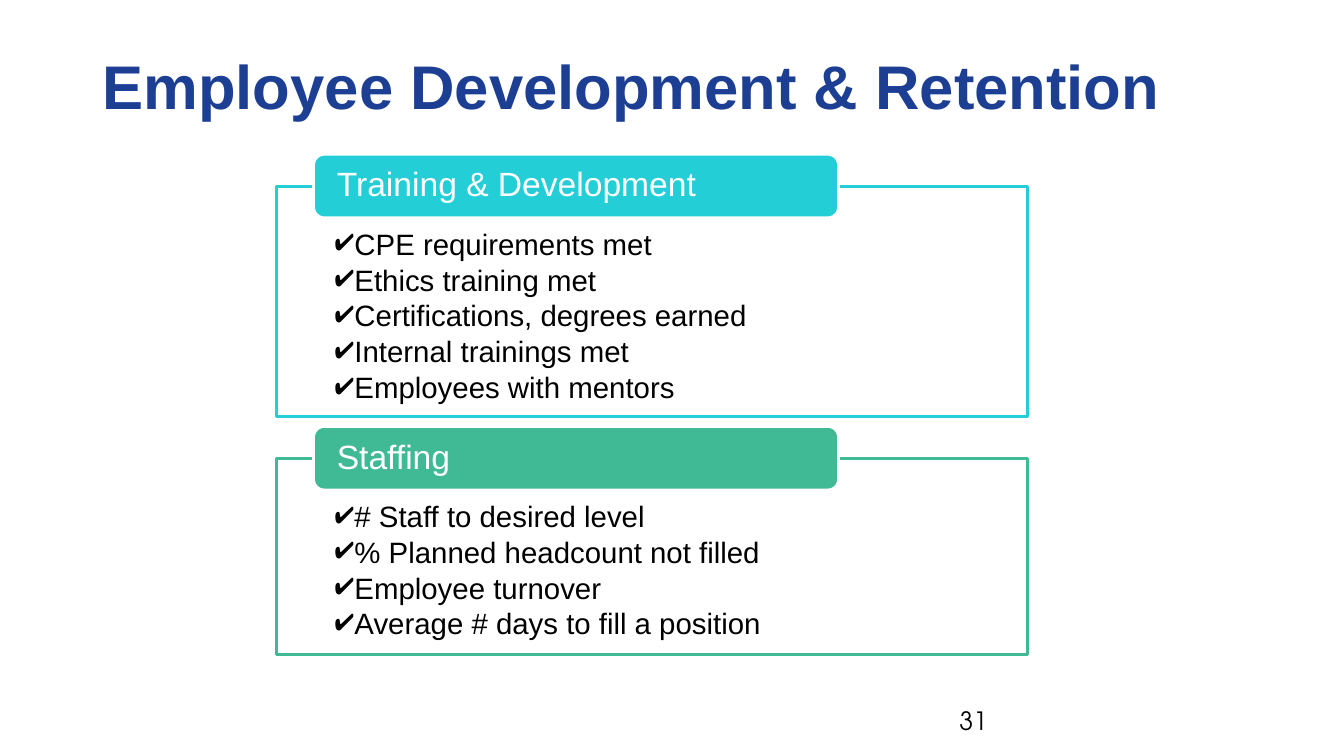
import pptx
import pptx.util
import pptx.dml.color
import pptx.enum.shapes
import pptx.enum.text
import lxml.etree

Pt = pptx.util.Pt
ANCHOR = pptx.enum.text.MSO_ANCHOR
SHAPE = pptx.enum.shapes.MSO_SHAPE

# Content
TITLE = "Employee Development & Retention"
PAGE_NUMBER = "31"
SECTIONS = [
    ("Training & Development", "cyan", [
        "CPE requirements met",
        "Ethics training met",
        "Certifications, degrees earned",
        "Internal trainings met",
        "Employees with mentors",
    ]),
    ("Staffing", "green", [
        "# Staff to desired level",
        "% Planned headcount not filled",
        "Employee turnover",
        "Average # days to fill a position",
    ]),
]
COLORS = {"navy": "1C3F94", "cyan": "24CED7", "green": "40B995",
          "white": "FFFFFF", "black": "000000"}

# Layout, in points
PANEL_LEFT, PANEL_WIDTH, FIRST_PANEL_TOP = 197.5, 536.5, 133.2
PANEL_PADDING, BULLET_HEIGHT, PANEL_GAP = 41.7, 24.5, 30.2
HEADING_LEFT, HEADING_WIDTH, HEADING_HEIGHT = 224, 375, 45.4
HEADING_RISE = 23
BULLET_INDENT = 14


def color(name):
    return pptx.dml.color.RGBColor.from_string(COLORS[name])


def add_block(kind, box, fill, line):
    block = slide.shapes.add_shape(kind, *map(Pt, box))
    block.shadow.inherit = False
    block.fill.solid()
    block.fill.fore_color.rgb = color(fill)
    block.line.color.rgb = color(line)
    block.line.width = Pt(2)
    return block


def add_label(box):
    return slide.shapes.add_textbox(*map(Pt, box))


def write(holder, lines, size, ink, insets, anchor, font="Arial",
          bold=False, spacing=1.0, gap=0, bullet=None):
    frame = holder.text_frame
    frame.word_wrap = True
    frame.vertical_anchor = anchor
    (frame.margin_left, frame.margin_top,
     frame.margin_right, frame.margin_bottom) = map(Pt, insets)
    frame.text = "\n".join(lines)
    for index, paragraph in enumerate(frame.paragraphs):
        paragraph.alignment = pptx.enum.text.PP_ALIGN.LEFT
        paragraph.line_spacing = spacing
        paragraph.space_before = Pt(gap if index else 0)
        if bullet:
            add_bullet(paragraph, bullet, ink)
        for run in paragraph.runs:
            run.font.name = font
            run.font.size = Pt(size)
            run.font.bold = bold
            run.font.color.rgb = color(ink)


def add_bullet(paragraph, character, ink):
    properties = paragraph._p.get_or_add_pPr()
    properties.set("marL", str(Pt(BULLET_INDENT)))
    properties.set("indent", str(-Pt(BULLET_INDENT)))
    namespace = "{" + properties.nsmap["a"] + "}"
    tint = lxml.etree.SubElement(properties, namespace + "buClr")
    lxml.etree.SubElement(tint, namespace + "srgbClr", val=COLORS[ink])
    lxml.etree.SubElement(properties, namespace + "buChar", char=character)


presentation = pptx.Presentation()
presentation.slide_width, presentation.slide_height = Pt(960), Pt(540)
slide = presentation.slides.add_slide(presentation.slide_layouts[6])

# Title
write(add_label((66.2, 28.8, 828, 58.3)), [TITLE], 44, "navy",
      (7.2, 0, 7.2, 0), ANCHOR.BOTTOM, bold=True)

# Sections: outlined panel with a heading over its top edge
panel_top = FIRST_PANEL_TOP
for heading, accent, measures in SECTIONS:
    panel_height = PANEL_PADDING + BULLET_HEIGHT * len(measures)
    panel = add_block(SHAPE.RECTANGLE,
                      (PANEL_LEFT, panel_top, PANEL_WIDTH, panel_height),
                      "white", accent)
    write(panel, measures, 21, "black", (41.7, 31, 41.7, 10.8), ANCHOR.TOP,
          spacing=0.9, gap=2.9, bullet="✔")

    tab = add_block(SHAPE.ROUNDED_RECTANGLE,
                    (HEADING_LEFT, panel_top - HEADING_RISE,
                     HEADING_WIDTH, HEADING_HEIGHT), accent, "white")
    tab.adjustments[0] = 0.167
    write(tab, [heading], 24, "white", (14.4, 0, 14.4, 0), ANCHOR.MIDDLE,
          spacing=0.9)
    panel_top += panel_height + PANEL_GAP

# Page number
write(add_label((678.2, 500.4, 216, 28.8)), [PAGE_NUMBER], 18, "black",
      (7.2, 3.6, 7.2, 3.6), ANCHOR.MIDDLE, font="TeX Gyre Adventor")

presentation.save("out.pptx")
